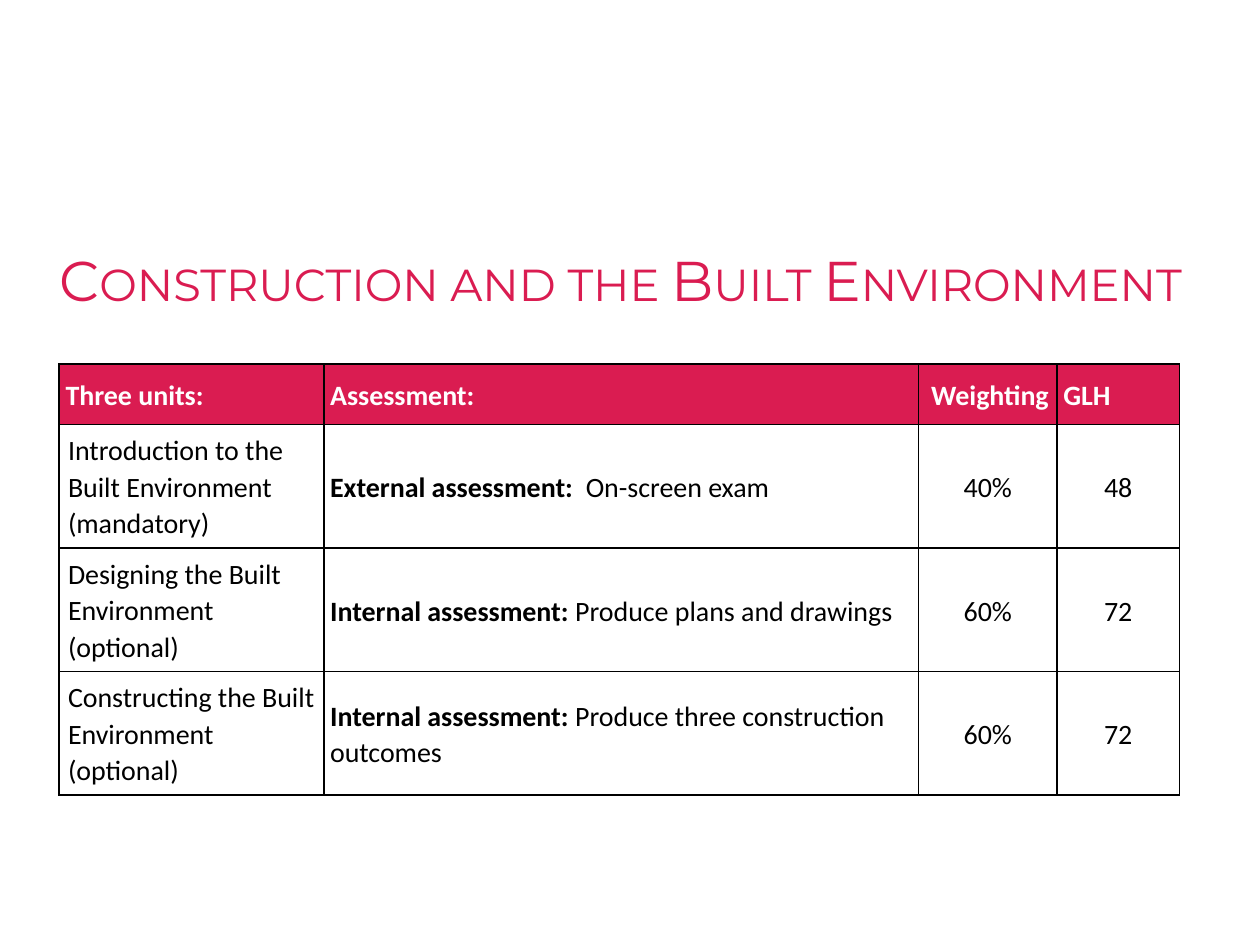
import pptx
import pptx.util
import pptx.dml.color
import pptx.enum.text
import pptx.oxml
import pptx.oxml.ns
from pptx.util import Inches

RGBColor = pptx.dml.color.RGBColor
CRIMSON = RGBColor(0xDA, 0x1C, 0x51)
WHITE = RGBColor(0xFF, 0xFF, 0xFF)
BLACK = RGBColor(0, 0, 0)
NS = pptx.oxml.ns.nsdecls("a")


def add_run(p, text, font, size, color, bold=False):
    r = p.add_run()
    r.text = text
    r.font.name = font
    r.font.size = pptx.util.Pt(size)
    r.font.color.rgb = color
    r.font.bold = bold
    return r


def add_borders(cell):
    tcPr = cell._tc.get_or_add_tcPr()
    for i, side in enumerate(("lnL", "lnR", "lnT", "lnB")):
        tcPr.insert(i, pptx.oxml.parse_xml(
            f'<a:{side} {NS} w="12700"><a:solidFill><a:srgbClr val="{BLACK}"/>'
            f'</a:solidFill></a:{side}>'))


prs = pptx.Presentation()
prs.slide_width = Inches(10)
prs.slide_height = Inches(7.5)
s = prs.slides.add_slide(prs.slide_layouts[6])

tf = s.shapes.add_textbox(Inches(0.47), Inches(1.95), Inches(9.27), Inches(1.3)).text_frame
tf.word_wrap = True
tf.margin_left = tf.margin_right = tf.margin_top = tf.margin_bottom = 0
r = add_run(tf.paragraphs[0], "Construction and the Built Environment", "Montserrat", 32, CRIMSON)
r._r.get_or_add_rPr().set("cap", "small")

headers = ["Three units:", "Assessment:", " Weighting", "GLH"]
units = [
    ("Introduction to the Built Environment", "(mandatory)",
     "External assessment:  ", "On-screen exam", "40%", "48"),
    ("Designing the Built Environment", "(optional)",
     "Internal assessment: ", "Produce plans and drawings", "60%", "72"),
    ("Constructing the Built Environment", "(optional)",
     "Internal assessment: ", "Produce three construction outcomes", "60%", "72"),
]
rows = [[[[(text, True)]] for text in headers]]
for unit, status, kind, task, weight, hours in units:
    rows.append([
        [[(unit, False)], [(status, False)]],
        [[(kind, True), (task, False)]],
        [[(weight, False)]],
        [[(hours, False)]],
    ])

table = s.shapes.add_table(
    4, 4, Inches(0.47), Inches(2.89), Inches(8.89), Inches(3.42)).table
table.horz_banding = False
for col, width in zip(table.columns, (2.1, 4.72, 1.1, 0.97)):
    col.width = Inches(width)
for row, height in zip(table.rows, (0.48, 0.98, 0.98, 0.98)):
    row.height = Inches(height)

for i, row in enumerate(rows):
    for j, paragraphs in enumerate(row):
        cell = table.cell(i, j)
        is_unit = i > 0 and j == 0
        cell.margin_left = cell.margin_right = Inches(0.07 if is_unit else 0.05)
        cell.margin_top = Inches(0 if is_unit else 0.01)
        cell.margin_bottom = 0
        cell.vertical_anchor = pptx.enum.text.MSO_ANCHOR.MIDDLE
        if i == 0:
            cell.fill.solid()
            cell.fill.fore_color.rgb = CRIMSON
        else:
            cell.fill.background()
        add_borders(cell)
        tf = cell.text_frame
        for k, runs in enumerate(paragraphs):
            p = tf.add_paragraph() if k else tf.paragraphs[0]
            p.line_spacing = 1.07
            if i > 0 and j > 1:
                p.alignment = pptx.enum.text.PP_ALIGN.CENTER
            for text, bold in runs:
                add_run(p, text, "Calibri", 16, BLACK if i else WHITE, bold)

prs.save("out.pptx")
